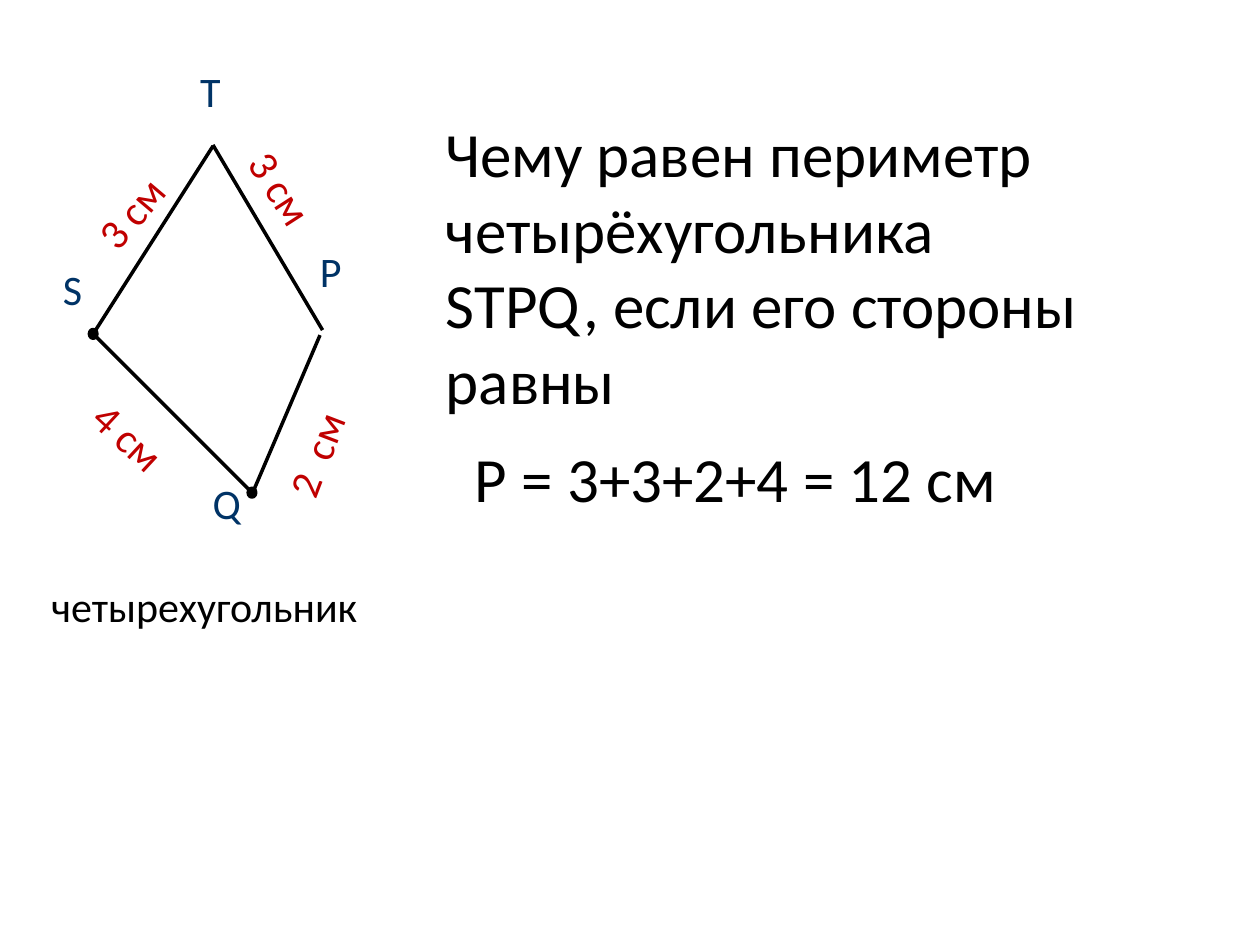
from pptx import Presentation
from pptx import util as u
from pptx.dml.color import RGBColor
from pptx.enum import shapes, text
from pptx.oxml.ns import qn
from lxml import etree

BLACK = RGBColor(0x00, 0x00, 0x00)
NAVY = RGBColor(0x00, 0x33, 0x66)
RED = RGBColor(0xC0, 0x00, 0x00)

SIDES = [
    ((2.54, 2.66), (2.01, 3.9)),
    ((1.69, 1.15), (2.56, 2.62)),
    ((0.74, 2.65), (1.69, 1.16)),
    ((0.74, 2.65), (2, 3.91)),
]
DOTS = [(0.74, 2.65), (2, 3.91)]
NAMES = [
    ("S", 0.4, 2.04, 0.36),
    ("T", 1.49, 0.47, 0.37),
    ("P", 2.44, 1.9, 0.38),
    ("Q", 1.59, 3.74, 0.43),
]
SIZES = [
    ("3 см", 1.76, 1.37, 1.11, 57.2),
    ("3 см", 0.6, 1.37, 0.98, 310.2),
    ("4 см", 0.58, 3.32, 1.11, 42.8),
    ("2  см", 1.99, 3.25, 1.11, 290.9),
]
TASK = "Чему равен периметр четырёхугольника STPQ, если его стороны равны"


def side(slide, start, end):
    """Draw one side of the figure."""
    ends = [u.Inches(n) for n in (*start, *end)]
    line = slide.shapes.add_connector(shapes.MSO_CONNECTOR.STRAIGHT, *ends)
    line.line.color.rgb = BLACK
    line.line.width = u.Pt(2)
    etree.SubElement(line._element.spPr, qn("a:effectLst"))


def dot(slide, x, y, wide=0.06, high=0.07):
    """Mark a corner with a dot centred on it."""
    box = [u.Inches(n) for n in (x - wide / 2, y - high / 2, wide, high)]
    mark = slide.shapes.add_shape(shapes.MSO_SHAPE.FLOWCHART_CONNECTOR, *box)
    mark.shadow.inherit = False
    mark.fill.solid()
    mark.fill.fore_color.rgb = BLACK
    mark.line.color.rgb = BLACK
    mark.line.width = u.Pt(2)


def label(slide, words, box, color=BLACK, size=24, wrap=True, turn=0):
    """Place a line or block of text, turned if asked."""
    shape = slide.shapes.add_textbox(*[u.Inches(n) for n in box])
    shape.rotation = turn
    frame = shape.text_frame
    frame.word_wrap = wrap
    frame.auto_size = text.MSO_AUTO_SIZE.SHAPE_TO_FIT_TEXT
    run = frame.paragraphs[0].add_run()
    run.text = words
    run.font.color.rgb = color
    for key, value in {"name": "Calibri", "size": u.Pt(size)}.items():
        setattr(run.font, key, value)


def main():
    """Build the slide and save it."""
    deck = Presentation()
    deck.slide_width, deck.slide_height = u.Inches(10), u.Inches(7.5)
    slide = deck.slides.add_slide(deck.slide_layouts[6])
    for start, end in SIDES:
        side(slide, start, end)
    for x, y in DOTS:
        dot(slide, x, y)
    for name, x, y, wide in NAMES:
        label(slide, name, (x, y, wide, 0.5), NAVY, wrap=False)
    label(slide, "четырехугольник", (0.31, 4.56, 2.65, 0.5), wrap=False)
    label(slide, TASK, (3.44, 0.86, 5.39, 2.52), size=36)
    for words, x, y, wide, turn in SIZES:
        label(slide, words, (x, y, wide, 0.5), RED, turn=turn)
    label(slide, "Р = 3+3+2+4 = 12 см", (3.67, 3.44, 5.7, 0.71), size=36)
    deck.save("out.pptx")


if __name__ == "__main__":
    main()
